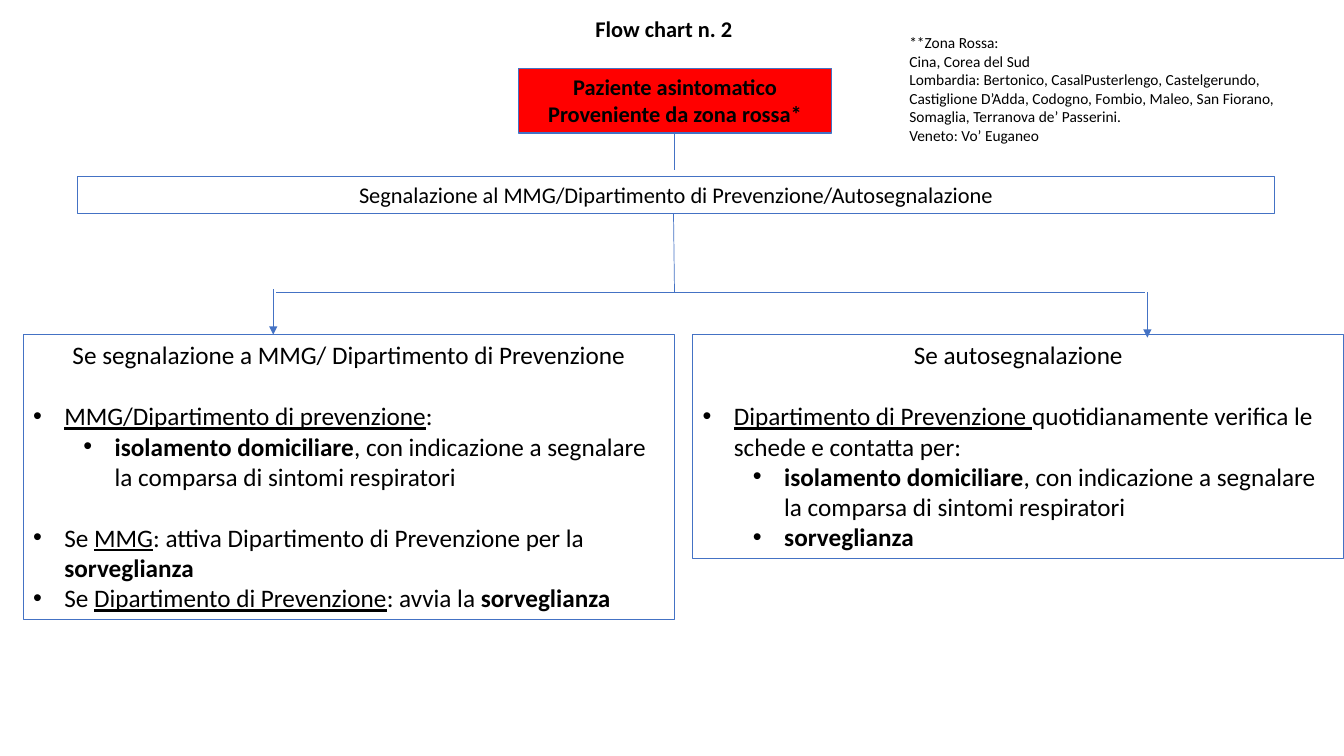
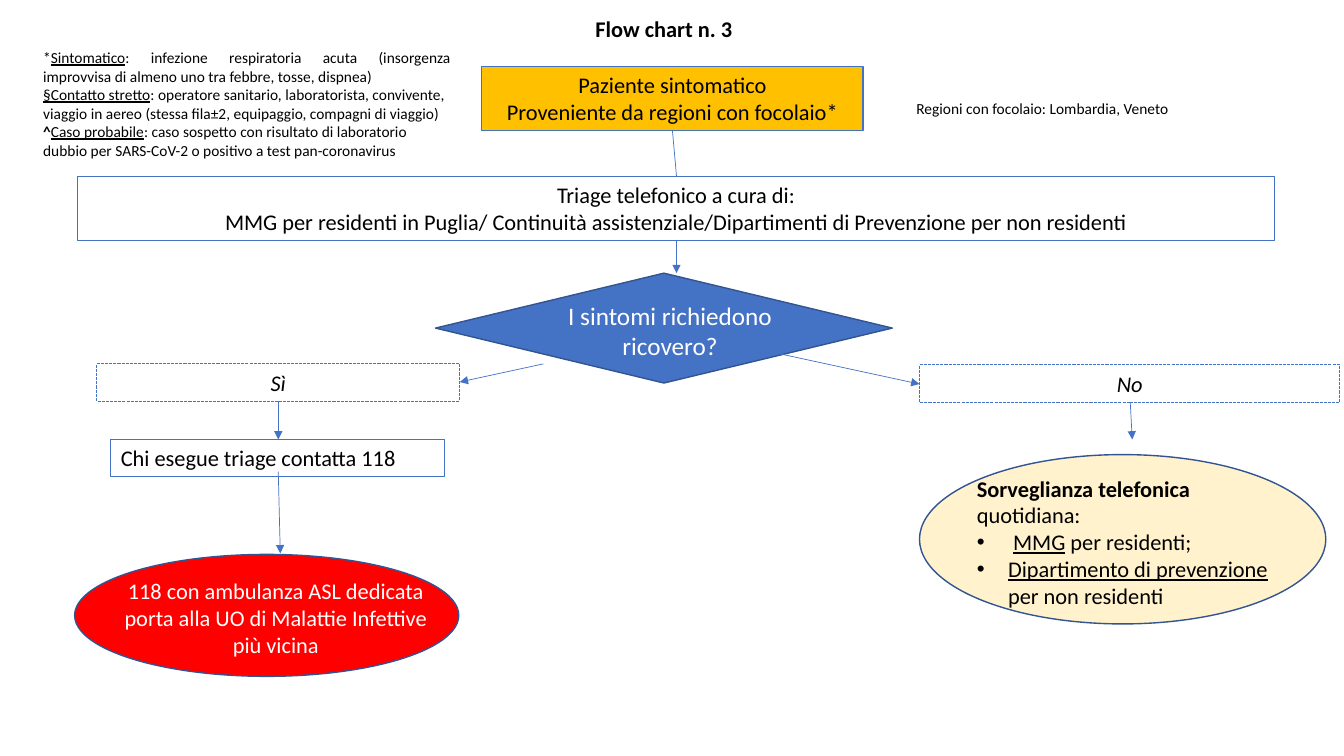
"""Build the two patient-management flow charts."""
import dataclasses

import lxml.etree
import pptx
import pptx.dml.color
import pptx.enum.dml
import pptx.enum.shapes
import pptx.enum.text
import pptx.oxml.ns
import pptx.slide
import pptx.text.text
import pptx.util

RGBColor = pptx.dml.color.RGBColor
Inches = pptx.util.Inches
Shape = pptx.enum.shapes.MSO_SHAPE
Align = pptx.enum.text.PP_ALIGN
qn = pptx.oxml.ns.qn

BLACK = RGBColor(0x00, 0x00, 0x00)
WHITE = RGBColor(0xFF, 0xFF, 0xFF)
BLUE = RGBColor(0x44, 0x72, 0xC4)
DARK_BLUE = RGBColor(0x32, 0x54, 0x91)
RED = RGBColor(0xFF, 0x00, 0x00)
AMBER = RGBColor(0xFF, 0xC0, 0x00)
CREAM = RGBColor(0xFF, 0xF2, 0xCC)
FONT = "Calibri"
BLANK_LINE = 22
BULLET_INDENT = 0.31
LEVEL_INDENT = 0.5


@dataclasses.dataclass(frozen=True)
class Span:
    """A stretch of text in one style."""
    text: str
    bold: bool = False
    underline: bool = False
    italic: bool = False


@dataclasses.dataclass(frozen=True)
class Para:
    """A paragraph, bulleted when it has a bullet level."""
    spans: tuple[Span, ...]
    align: Align = Align.LEFT
    bullet_level: int | None = None
    space_before: float = 0


@dataclasses.dataclass(frozen=True)
class Box:
    """A text box, or a preset shape when a kind is given."""
    place: tuple[float, float, float, float]
    paras: tuple[Para, ...] = ()
    kind: Shape | None = None
    fill: RGBColor | None = None
    line: RGBColor = BLUE
    line_width: float = 0.75
    dashed: bool = False
    size: float = 16
    color: RGBColor = BLACK


@dataclasses.dataclass(frozen=True)
class Link:
    """A straight line between two points."""
    start: tuple[float, float]
    end: tuple[float, float]
    arrow: bool = True


@dataclasses.dataclass(frozen=True)
class Chart:
    """The content of one page, from back to front."""
    title: str
    boxes: tuple[Box, ...]
    links: tuple[Link, ...]


def plain(text: str) -> Para:
    """Return a left-aligned paragraph in one style."""
    return Para((Span(text),))


def centred(text: str, bold: bool = False, italic: bool = False) -> Para:
    """Return a centred paragraph in one style."""
    return Para((Span(text, bold=bold, italic=italic),), Align.CENTER)


def bullet(*spans: Span, level: int = 0, space_before: float = 0) -> Para:
    """Return a bulleted paragraph."""
    return Para(spans, bullet_level=level, space_before=space_before)


def write_text(frame: pptx.text.text.TextFrame, paras: tuple[Para, ...],
               size: float, color: RGBColor) -> None:
    """Fill a text frame, run by run."""
    frame.word_wrap = True
    frame.auto_size = pptx.enum.text.MSO_AUTO_SIZE.NONE
    frame.vertical_anchor = pptx.enum.text.MSO_ANCHOR.TOP
    for index, content in enumerate(paras):
        para = frame.add_paragraph() if index else frame.paragraphs[0]
        para.alignment = content.align
        para.line_spacing = 1.0
        para.space_before = pptx.util.Pt(content.space_before)
        if content.bullet_level is not None:
            add_bullet(para, content.bullet_level)
        for span in content.spans:
            run = para.add_run()
            run.text = span.text
            run.font.name = FONT
            run.font.size = pptx.util.Pt(size)
            run.font.color.rgb = color
            run.font.bold = span.bold
            run.font.underline = span.underline
            run.font.italic = span.italic


def add_bullet(para: pptx.text.text._Paragraph, level: int) -> None:
    """Give a paragraph a hanging round bullet."""
    para.level = level
    properties = para._p.get_or_add_pPr()
    properties.set("marL", str(Inches(BULLET_INDENT + level * LEVEL_INDENT)))
    properties.set("indent", str(-Inches(BULLET_INDENT)))
    lxml.etree.SubElement(properties, qn("a:buFont"), typeface="Arial")
    lxml.etree.SubElement(properties, qn("a:buChar"), char="•")


def draw_title(page: pptx.slide.Slide, title: str) -> None:
    """Place and format the title placeholder."""
    box = page.shapes.title
    box.left, box.top = Inches(1.1), Inches(0.1)
    box.width, box.height = Inches(10.97), Inches(0.64)
    write_text(box.text_frame, (centred(title, bold=True),), 16, BLACK)


def draw_box(page: pptx.slide.Slide, content: Box) -> None:
    """Draw a shape or a text box with its text."""
    place = [Inches(length) for length in content.place]
    if content.kind is None:
        box = page.shapes.add_textbox(*place)
    else:
        box = page.shapes.add_shape(content.kind, *place)
        box.shadow.inherit = False
        box.line.color.rgb = content.line
        box.line.width = pptx.util.Pt(content.line_width)
        if content.dashed:
            box.line.dash_style = pptx.enum.dml.MSO_LINE.SQUARE_DOT
        if content.fill is None:
            box.fill.background()
        else:
            box.fill.solid()
            box.fill.fore_color.rgb = content.fill
    write_text(box.text_frame, content.paras, content.size, content.color)


def draw_link(page: pptx.slide.Slide, content: Link) -> None:
    """Draw a thin connector, with an arrowhead if wanted."""
    ends = [Inches(length) for length in content.start + content.end]
    link = page.shapes.add_connector(pptx.enum.shapes.MSO_CONNECTOR.STRAIGHT, *ends)
    link.line.color.rgb = BLUE
    link.line.width = pptx.util.Pt(0.5)
    properties = link._element.spPr
    if content.arrow:
        lxml.etree.SubElement(properties.find(qn("a:ln")), qn("a:tailEnd"), type="triangle")
    lxml.etree.SubElement(properties, qn("a:effectLst"))


ISOLATION = bullet(
    Span("isolamento domiciliare", bold=True),
    Span(", con indicazione a segnalare la comparsa di sintomi respiratori"), level=1)
SURVEILLANCE = Span("sorveglianza", bold=True)

ASYMPTOMATIC = Chart(
    "Flow chart n. 2",
    (
        Box((5.14, 0.68, 3.11, 0.64),
            (centred("Paziente asintomatico", bold=True),
             centred("Proveniente da zona rossa*", bold=True)),
            Shape.RECTANGLE, RED),
        Box((0.77, 1.75, 11.87, 0.37),
            (centred("Segnalazione al MMG/Dipartimento di Prevenzione/Autosegnalazione"),),
            Shape.RECTANGLE),
        Box((0.23, 3.32, 6.46, 2.83),
            (centred("Se segnalazione a MMG/ Dipartimento di Prevenzione"),
             bullet(Span("MMG/Dipartimento di prevenzione", underline=True), Span(":"),
                    space_before=BLANK_LINE),
             ISOLATION,
             bullet(Span("Se "), Span("MMG", underline=True),
                    Span(": attiva Dipartimento di Prevenzione per la "), SURVEILLANCE,
                    space_before=BLANK_LINE),
             bullet(Span("Se "), Span("Dipartimento di Prevenzione", underline=True),
                    Span(": avvia la "), SURVEILLANCE)),
            Shape.RECTANGLE, size=18),
        Box((6.87, 3.32, 6.46, 2.22),
            (centred("Se autosegnalazione"),
             bullet(Span("Dipartimento di Prevenzione ", underline=True),
                    Span("quotidianamente verifica le schede e contatta per:"),
                    space_before=BLANK_LINE),
             ISOLATION,
             bullet(SURVEILLANCE, level=1)),
            Shape.RECTANGLE, size=18),
        Box((8.92, 0.28, 4.02, 1.21),
            (plain("**Zona Rossa:"),
             plain("Cina, Corea del Sud"),
             plain("Lombardia: Bertonico, CasalPusterlengo, Castelgerundo, Castiglione D’Adda, "
                   "Codogno, Fombio, Maleo, San Fiorano, Somaglia, Terranova de’ Passerini."),
             plain("Veneto: Vo’ Euganeo")),
            size=11),
    ),
    (
        Link((6.69, 1.32), (6.69, 1.69), arrow=False),
        Link((6.68, 2.12), (6.69, 2.9), arrow=False),
        Link((2.74, 2.9), (11.36, 2.9), arrow=False),
        Link((2.71, 2.87), (2.71, 3.32)),
        Link((11.38, 2.9), (11.38, 3.35)),
    ),
)

SYMPTOMATIC = Chart(
    "Flow chart n. 3",
    (
        Box((4.78, 0.66, 3.78, 0.64),
            (centred("Paziente sintomatico"),
             centred("Proveniente da regioni con focolaio*")),
            Shape.RECTANGLE, AMBER),
        Box((0.77, 1.75, 11.87, 0.64),
            (centred("Triage telefonico a cura di:"),
             centred("MMG per residenti in Puglia/ Continuità assistenziale/"
                     "Dipartimenti di Prevenzione per non residenti")),
            Shape.RECTANGLE),
        Box((4.32, 2.71, 4.53, 1.09), (), Shape.DIAMOND, BLUE, DARK_BLUE, 1),
        Box((5.39, 2.93, 2.51, 0.71), (centred("I sintomi richiedono ricovero?"),),
            size=18, color=WHITE),
        Box((0.96, 3.61, 3.6, 0.37), (centred("Sì", italic=True),),
            Shape.RECTANGLE, dashed=True),
        Box((9.12, 3.62, 4.17, 0.37), (centred("No", italic=True),),
            Shape.RECTANGLE, dashed=True),
        Box((1.1, 4.36, 3.31, 0.37), (plain("Chi esegue triage contatta 118"),),
            Shape.RECTANGLE),
        Box((0.74, 5.5, 3.81, 1.21), (), Shape.OVAL, RED, DARK_BLUE, 1),
        Box((1.08, 5.68, 3.31, 0.91),
            (centred("118 con ambulanza ASL dedicata porta alla UO di Malattie Infettive "
                     "più vicina"),),
            color=WHITE),
        Box((9.12, 4.51, 4.03, 1.68), (), Shape.OVAL, CREAM, DARK_BLUE, 1),
        Box((9.59, 4.66, 3.31, 1.45),
            (Para((Span("Sorveglianza telefonica", bold=True), Span(" quotidiana:"))),
             bullet(Span(" "), Span("MMG", underline=True), Span(" per residenti;")),
             bullet(Span("Dipartimento di prevenzione ", underline=True),
                    Span("per non residenti")))),
        Box((0.33, 0.43, 4.24, 1.58),
            (Para((Span("*"), Span("Sintomatico", underline=True),
                   Span(": infezione respiratoria acuta (insorgenza improvvisa di almeno uno "
                        "tra febbre, tosse, dispnea)")), Align.JUSTIFY),
             Para((Span("§Contatto stretto", underline=True),
                   Span(": operatore sanitario, laboratorista, convivente, viaggio in aereo "
                        "(stessa fila±2, equipaggio, compagni di viaggio)"))),
             Para((Span("^", bold=True), Span("Caso probabile", underline=True),
                   Span(": caso sospetto con risultato di laboratorio dubbio per SARS-CoV-2 "
                        "o positivo a test pan-coronavirus")))),
            size=11),
        Box((8.99, 0.93, 4.02, 0.29), (plain("Regioni con focolaio: Lombardia, Veneto"),),
            size=11),
    ),
    (
        Link((6.67, 1.3), (6.71, 1.75), arrow=False),
        Link((6.71, 2.39), (6.71, 2.71)),
        Link((5.39, 3.61), (4.56, 3.79)),
        Link((7.64, 3.49), (9.12, 3.81)),
        Link((2.76, 3.98), (2.76, 4.36)),
        Link((2.76, 4.68), (2.78, 5.49)),
        Link((11.21, 3.99), (11.23, 4.36)),
    ),
)


def main() -> None:
    """Draw both charts and save the deck."""
    deck = pptx.Presentation()
    deck.slide_width, deck.slide_height = Inches(13.33), Inches(7.5)
    for chart in (ASYMPTOMATIC, SYMPTOMATIC):
        page = deck.slides.add_slide(deck.slide_layouts.get_by_name("Title Only"))
        draw_title(page, chart.title)
        for box in chart.boxes:
            draw_box(page, box)
        for link in chart.links:
            draw_link(page, link)
    deck.save("out.pptx")


if __name__ == "__main__":
    main()
